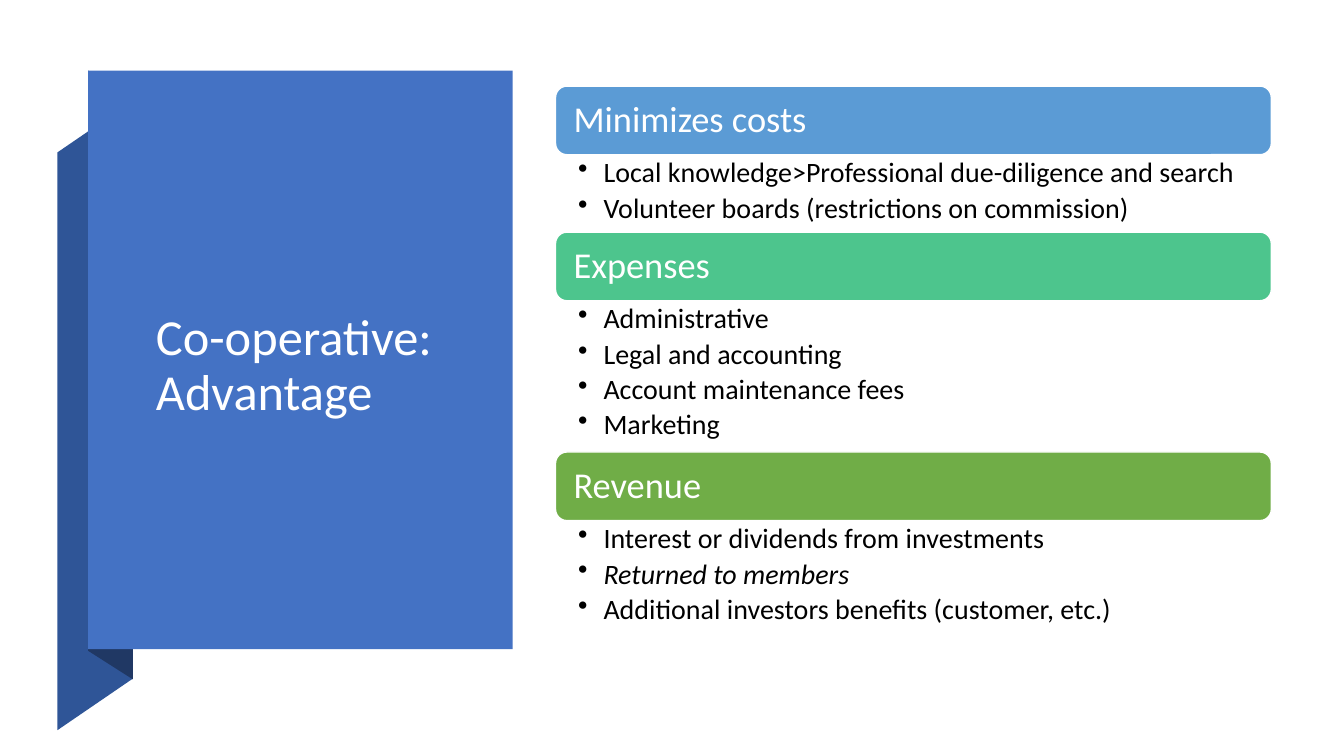
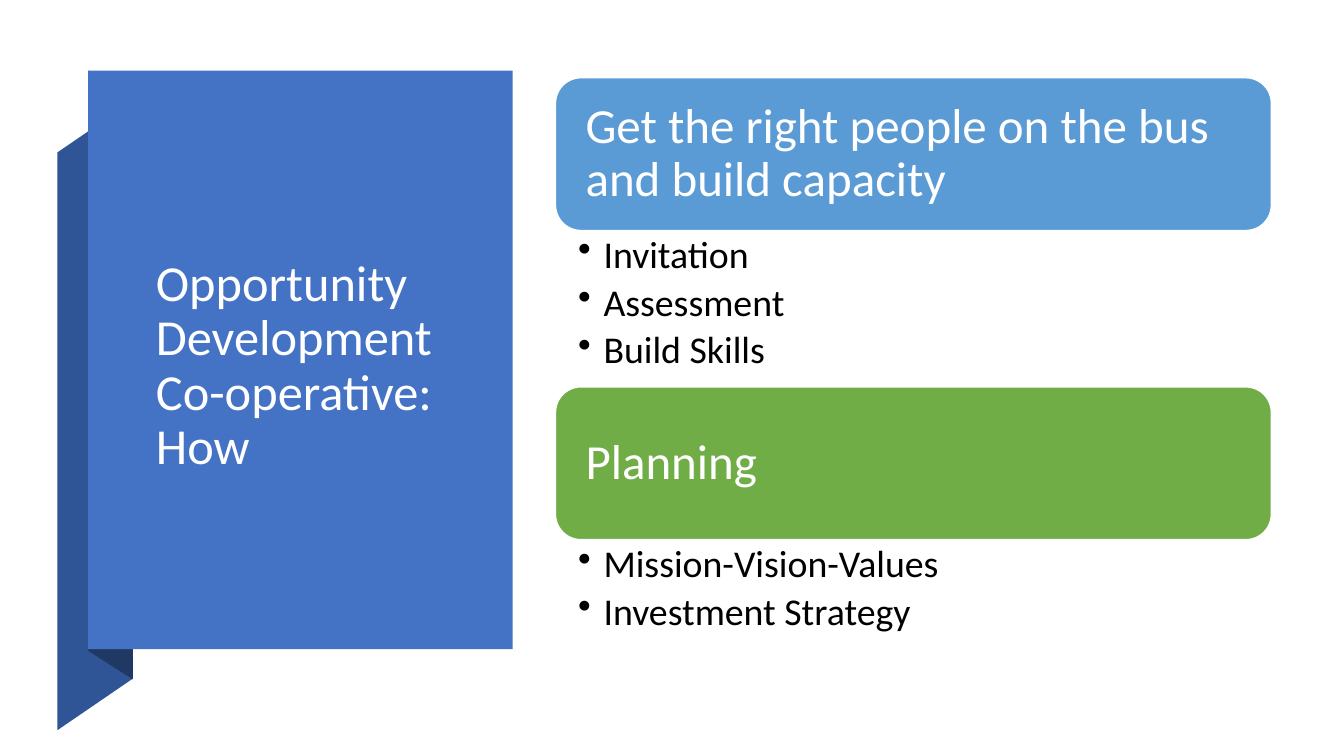
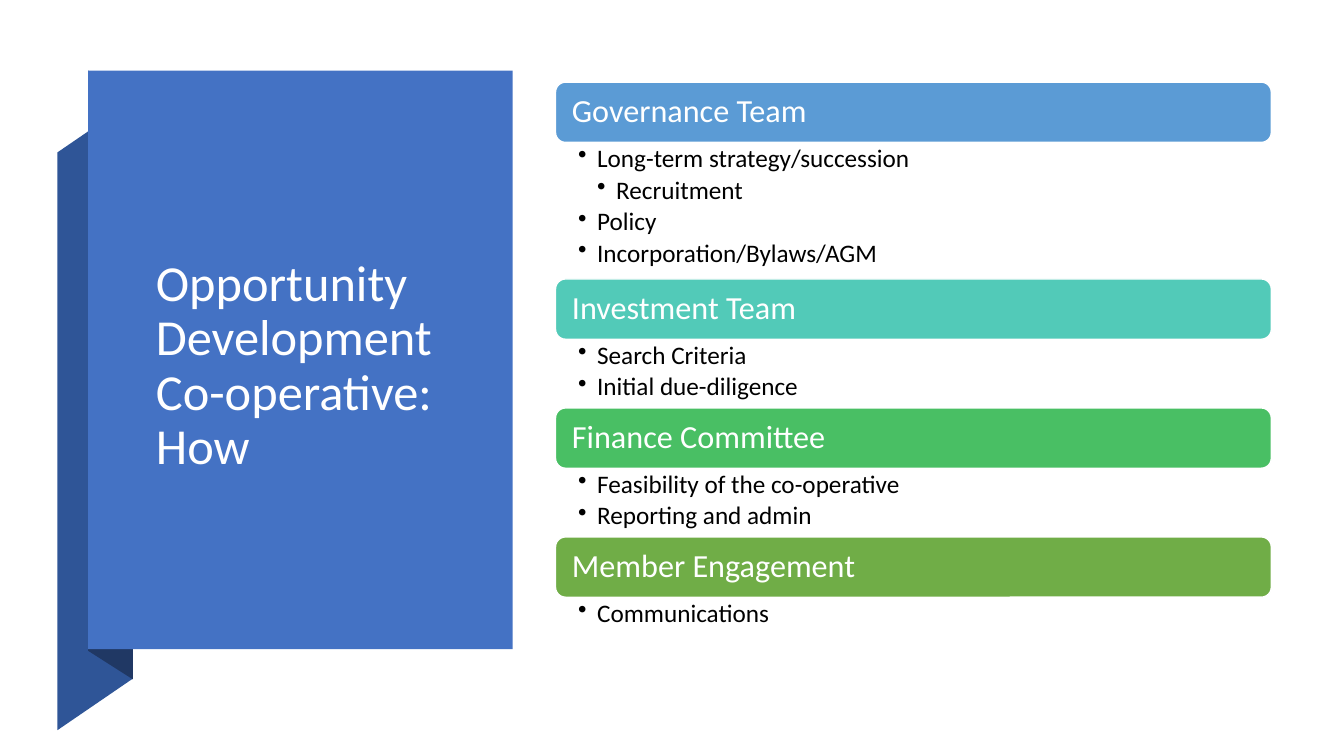
from lxml.etree import SubElement
from pptx import Presentation
from pptx.dml.color import RGBColor
from pptx.enum.shapes import MSO_SHAPE
from pptx.enum.text import MSO_ANCHOR, PP_ALIGN
from pptx.oxml.ns import qn
from pptx.util import Cm, Pt

COLORS = {
    "panel": "4472C4", "ribbon": "2F5597", "fold": "203864",
    "white": "FFFFFF", "black": "000000",
    "blue": "5B9BD5", "mint": "4DC58D", "teal": "52CAB8",
    "emerald": "49BF64", "green": "70AD47",
}
FONT = "Calibri"
LINE_SPACING = 0.9
BULLET_GAP = 0.18  # space after a bullet, as a share of its text size

# Ribbon outlines behind the title panel, in cm
RIBBON = [(1.45, 18.4), (3.35, 17.1), (3.35, 2.54), (1.45, 3.84)]
FOLD = [(2.22, 16.4), (3.35, 17.12), (3.35, 2.52), (2.22, 1.78)]
PANEL = (2.22, 1.78, 10.7, 14.58)
TITLE = (3.68, 4.24, 7.65, 10)

# Left edge and width of the section column, in cm
COLUMN_X, COLUMN_W = 14, 18.04
BULLET_X = 0.57

# Section sizes for each slide: lengths in cm, text in points
MEDIUM = {"top": 2.17, "bar": 1.73, "bar_inset": 0.37, "head": 26,
          "body": 20, "inset_y": 0.1, "inset_right": 0.5, "indent": 0.64}
LARGE = {"top": 1.96, "bar": 3.85, "bar_inset": 0.57, "head": 35,
         "body": 27, "inset_y": 0.13, "inset_right": 0.68, "indent": 0.64}
SMALL = {"top": 2.07, "bar": 1.52, "bar_inset": 0.34, "head": 23,
         "body": 18, "inset_y": 0.08, "inset_right": 0.46, "indent": 0.48}

# Title, sizes, sections (heading, colour, body height, bullets);
# a bullet is (text, level, italic) or plain text
SLIDES = [
    ("Co-operative: Advantage", MEDIUM, [
        ("Minimizes costs", "blue", 1.95, [
            "Local knowledge>Professional due-diligence and search",
            "Volunteer boards (restrictions on commission)"]),
        ("Expenses", "mint", 3.81, [
            "Administrative", "Legal and accounting",
            "Account maintenance fees", "Marketing"]),
        ("Revenue", "green", 2.92, [
            "Interest or dividends from investments",
            ("Returned to members", 1, True),
            "Additional investors benefits (customer, etc.)"]),
    ]),
    ("Opportunity Development Co-operative: How", LARGE, [
        ("Get the right people on the bus and build capacity", "blue", 3.94, [
            "Invitation", "Assessment", "Build Skills"]),
        ("Planning", "green", 2.62, [
            "Mission-Vision-Values", "Investment Strategy"]),
    ]),
    ("Opportunity Development Co-operative: How", SMALL, [
        ("Governance Team", "blue", 3.44, [
            "Long-term strategy/succession", ("Recruitment", 2, False),
            "Policy", "Incorporation/Bylaws/AGM"]),
        ("Investment Team", "teal", 1.73, [
            "Search Criteria", "Initial due-diligence"]),
        ("Finance Committee", "emerald", 1.73, [
            "Feasibility of the co-operative", "Reporting and admin"]),
        ("Member Engagement", "green", 1.07, ["Communications"]),
    ]),
]


def rgb(name):
    return RGBColor.from_string(COLORS[name])


def set_all(target, values):
    for name, value in values.items():
        setattr(target, name, value)


def paint(sp, fill, line=None):
    sp.shadow.inherit = False
    sp.fill.solid()
    sp.fill.fore_color.rgb = rgb(fill)
    if line:
        sp.line.color.rgb = rgb(line)
        sp.line.width = Pt(1)
    else:
        sp.line.fill.background()


def write(p, text, size, color, italic=False):
    set_all(p, {"alignment": PP_ALIGN.LEFT, "line_spacing": LINE_SPACING})
    r = p.add_run()
    r.text = text
    set_all(r.font, {"name": FONT, "size": Pt(size), "italic": italic})
    r.font.color.rgb = rgb(color)


def add_outline(s, points, color):
    start, *rest = [(Cm(x), Cm(y)) for x, y in points]
    builder = s.shapes.build_freeform(*start)
    builder.add_line_segments(rest, close=True)
    paint(builder.convert_to_shape(), color)


def add_title_panel(s, title):
    add_outline(s, RIBBON, "ribbon")
    add_outline(s, FOLD, "fold")
    paint(s.shapes.add_shape(MSO_SHAPE.RECTANGLE, *map(Cm, PANEL)), "panel")
    tf = s.shapes.add_textbox(*map(Cm, TITLE)).text_frame
    set_all(tf, {"word_wrap": True, "vertical_anchor": MSO_ANCHOR.MIDDLE})
    write(tf.paragraphs[0], title, 36, "white")


def add_bar(s, y, heading, color, size):
    sp = s.shapes.add_shape(MSO_SHAPE.ROUNDED_RECTANGLE, Cm(COLUMN_X), Cm(y),
                            Cm(COLUMN_W), Cm(size["bar"]))
    paint(sp, color, "white")
    tf = sp.text_frame
    inset = Cm(size["bar_inset"])
    set_all(tf, {"word_wrap": True, "vertical_anchor": MSO_ANCHOR.MIDDLE,
                 "margin_left": inset, "margin_right": inset})
    write(tf.paragraphs[0], heading, size["head"], "white")


def add_bullets(s, y, height, bullets, size):
    tf = s.shapes.add_textbox(Cm(COLUMN_X), Cm(y),
                              Cm(COLUMN_W), Cm(height)).text_frame
    set_all(tf, {"word_wrap": True, "margin_left": Cm(BULLET_X),
                 "margin_right": Cm(size["inset_right"]),
                 "margin_top": Cm(size["inset_y"]),
                 "margin_bottom": Cm(size["inset_y"])})
    for i, bullet in enumerate(bullets):
        text, level, italic = (bullet, 1, False) if isinstance(bullet, str) else bullet
        p = tf.add_paragraph() if i else tf.paragraphs[0]
        write(p, text, size["body"], "black", italic)
        set_all(p, {"level": level, "space_after": Pt(size["body"] * BULLET_GAP)})
        # Bullet sign and hanging indent
        pPr = p._p.get_or_add_pPr()
        pPr.set("marL", str(Cm(size["indent"] * level)))
        pPr.set("indent", str(-Cm(size["indent"])))
        SubElement(pPr, qn("a:buChar")).set("char", "•")


def add_sections(s, sections, size):
    y = size["top"]
    for heading, color, height, bullets in sections:
        add_bar(s, y, heading, color, size)
        y += size["bar"]
        add_bullets(s, y, height, bullets, size)
        y += height


def main():
    prs = Presentation()
    set_all(prs, {"slide_width": Cm(33.87), "slide_height": Cm(19.05)})
    for title, size, sections in SLIDES:
        s = prs.slides.add_slide(prs.slide_layouts[6])
        add_title_panel(s, title)
        add_sections(s, sections, size)
    prs.save("out.pptx")


if __name__ == "__main__":
    main()
